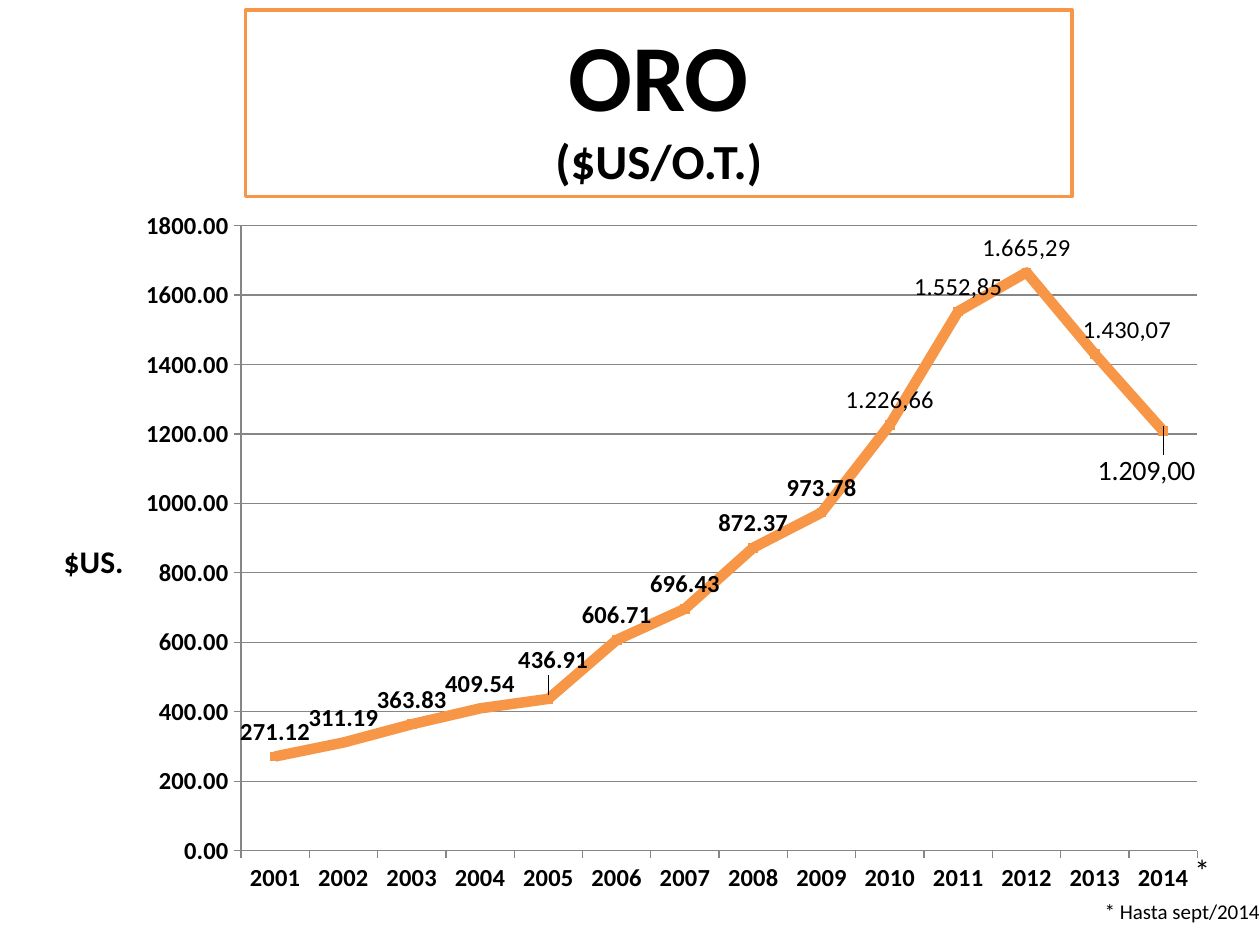
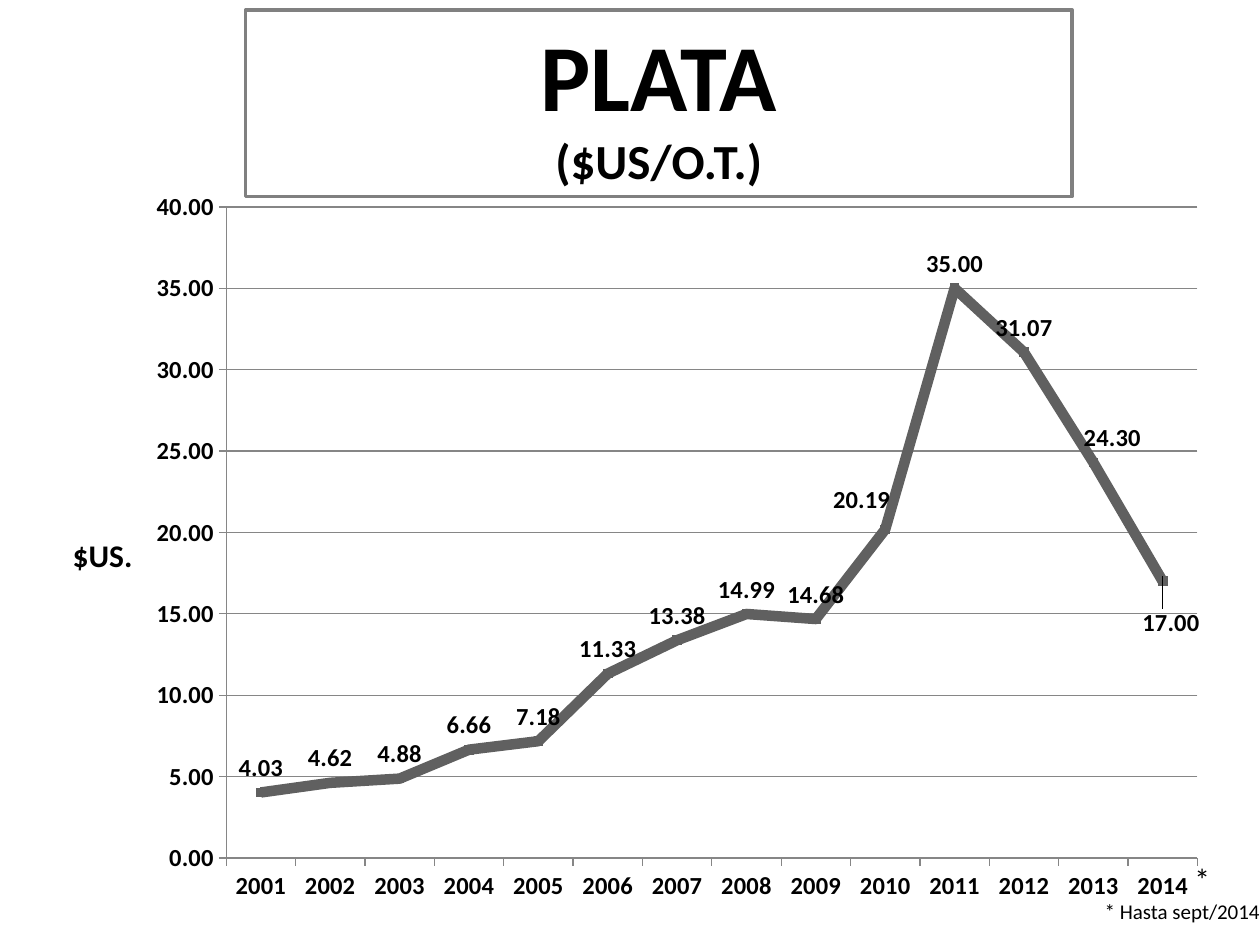
from dataclasses import dataclass

from lxml import etree
from pptx import Presentation
from pptx import util as u
from pptx.chart.data import CategoryChartData
from pptx.dml.color import RGBColor
from pptx.enum import chart as ch
from pptx.enum import text as tx
from pptx.oxml.ns import qn

Cm, Pt = u.Cm, u.Pt

# Shared style
FONT = "Calibri"
BLACK = RGBColor(0x00, 0x00, 0x00)
WHITE = RGBColor(0xFF, 0xFF, 0xFF)
ORANGE = RGBColor(0xF7, 0x96, 0x46)
GREY = RGBColor(0x80, 0x80, 0x80)
DARK_GREY = RGBColor(0x60, 0x60, 0x60)
GRID_GREY = RGBColor(0x86, 0x86, 0x86)

TITLE_ONLY = 5
YEARS = [str(year) for year in range(2001, 2015)]
TITLE_BOX = (4.95, 0.2, 16.66, 3.76)
FOOTNOTE_BOX = (22.02, 17.98, 3.96, 1.55)


@dataclass
class Label:
    """Label of one year: shift as a share of the chart, own wording if any."""
    dx: float = 0
    dy: float = 0
    wording: str = ""
    size: int = 14


@dataclass
class Metal:
    """Price history of one metal; boxes and positions in cm."""
    name: str
    frame_color: RGBColor
    line_color: RGBColor
    prices: list
    labels: dict
    top: int
    step: int
    chart_box: tuple
    plot_box: tuple
    unit_at: tuple
    star_top: float


METALS = [
    Metal("ORO", ORANGE, ORANGE,
          [271.12, 311.19, 363.83, 409.54, 436.91, 606.71, 696.43,
           872.37, 973.78, 1226.66, 1552.85, 1665.29, 1430.07, 1209],
          {"2005": Label(0.004, -0.02),
           "2010": Label(wording="1.226,66"),
           "2011": Label(wording="1.552,85"),
           "2012": Label(wording="1.665,29"),
           "2013": Label(0.027, 0, "1.430,07"),
           "2014": Label(-0.014, 0.094, "1.209,00", 16)},
          1800, 200, (0.58, 3.96, 24, 14.33), (4.86, 4.55, 19.28, 12.6),
          (1.17, 10.77), 17.04),
    Metal("PLATA", GREY, DARK_GREY,
          [4.03, 4.62, 4.88, 6.66, 7.18, 11.33, 13.38,
           14.99, 14.68, 20.19, 35, 31.07, 24.3, 17],
          {"2010": Label(-0.02, -0.007),
           "2013": Label(0.016, 0),
           "2014": Label(0.007, 0.09)},
          40, 5, (0.79, 3.58, 23.83, 14.88), (4.56, 4.17, 19.58, 13.13),
          (1.35, 10.64), 17.22),
]


def cm_box(box):
    return [Cm(length) for length in box]


def style_font(font, size, bold=False):
    font.name, font.size, font.bold = FONT, Pt(size), bold
    font.color.rgb = BLACK


def set_layout(parent, index, **settings):
    """Give a chart part a manual layout, as child number index."""
    for old in parent.findall(qn("c:layout")):
        parent.remove(old)
    layout = etree.Element(qn("c:layout"))
    manual = etree.SubElement(layout, qn("c:manualLayout"))
    for tag, value in settings.items():
        etree.SubElement(manual, qn(f"c:{tag}")).set("val", str(value))
    parent.insert(index, layout)


def share_of(outer, left, top):
    """Position in cm as a share of the outer box."""
    return {"x": round((left - outer[0]) / outer[2], 4),
            "y": round((top - outer[1]) / outer[3], 4)}


def add_title(slide, metal, box):
    title = slide.shapes.title
    title.left, title.top, title.width, title.height = cm_box(box)
    title.fill.solid()
    title.fill.fore_color.rgb = WHITE
    title.line.color.rgb = metal.frame_color
    title.line.width = Pt(2)
    frame = title.text_frame
    frame.text = f"{metal.name}\n($US/O.T.)"
    frame.word_wrap = True
    frame.auto_size = tx.MSO_AUTO_SIZE.SHAPE_TO_FIT_TEXT
    frame.vertical_anchor = tx.MSO_ANCHOR.MIDDLE
    for paragraph, size in zip(frame.paragraphs, (54, 28)):
        paragraph.alignment = tx.PP_ALIGN.CENTER
        style_font(paragraph.font, size, True)
    # The frame stands in front of the chart
    title._element.getparent().append(title._element)


def add_note(slide, wording, size, box):
    note = slide.shapes.add_textbox(*cm_box(box))
    frame = note.text_frame
    frame.word_wrap = True
    frame.text = wording
    style_font(frame.paragraphs[0].font, size)


def style_axes(chart, metal):
    years, prices = chart.category_axis, chart.value_axis
    for axis in (years, prices):
        axis.major_tick_mark = ch.XL_TICK_MARK.OUTSIDE
        axis.minor_tick_mark = ch.XL_TICK_MARK.NONE
        axis.format.line.color.rgb = GRID_GREY
        style_font(axis.tick_labels.font, 14, True)
    prices.minimum_scale, prices.maximum_scale = 0, metal.top
    prices.major_unit = metal.step
    prices.tick_labels.number_format = "0.00"
    prices.tick_labels.number_format_is_linked = False
    prices.has_major_gridlines = True
    prices.major_gridlines.format.line.color.rgb = GRID_GREY

    # Upright unit beside the price axis
    unit = prices.axis_title
    unit.text_frame.text = "$US."
    style_font(unit.text_frame.paragraphs[0].runs[0].font, 18, True)
    body = unit.text_frame._txBody.bodyPr
    body.set("rot", "0")
    body.set("vert", "horz")
    set_layout(unit._element, 1, xMode="edge", yMode="edge",
               **share_of(metal.chart_box, *metal.unit_at))


def style_labels(series, metal):
    labels = series.data_labels
    labels.show_value = True
    labels.number_format, labels.number_format_is_linked = "0.00", False
    labels.position = ch.XL_LABEL_POSITION.ABOVE
    style_font(labels.font, 14, True)
    for year, special in metal.labels.items():
        label = series.points[YEARS.index(year)].data_label
        if special.wording:
            label.text_frame.text = special.wording
            run = label.text_frame.paragraphs[0].runs[0]
            style_font(run.font, special.size)
        else:
            style_font(label.font, special.size, True)
        label.position = ch.XL_LABEL_POSITION.ABOVE
        if special.dx or special.dy:
            set_layout(label._dLbl, 1, x=special.dx, y=special.dy)


def add_price_chart(slide, metal, box):
    history = CategoryChartData(number_format="0.00")
    history.categories = YEARS
    history.add_series("Series 1", metal.prices)
    chart = slide.shapes.add_chart(
        ch.XL_CHART_TYPE.LINE_MARKERS, *cm_box(box), history).chart
    chart.has_legend = chart.has_title = False
    style_font(chart.font, 10)
    plot = chart.plots[0]
    plot.vary_by_categories = False

    left, top, width, height = metal.plot_box
    set_layout(chart._chartSpace.chart.plotArea, 0, layoutTarget="inner",
               xMode="edge", yMode="edge", **share_of(box, left, top),
               w=round(width / box[2], 4), h=round(height / box[3], 4))

    series = plot.series[0]
    series.smooth = False
    series.format.line.color.rgb = metal.line_color
    series.format.line.width = Pt(6)
    marker = series.marker
    marker.style, marker.size = ch.XL_MARKER_STYLE.SQUARE, 5
    marker.format.fill.solid()
    marker.format.fill.fore_color.rgb = metal.line_color
    marker.format.line.color.rgb = metal.line_color
    style_axes(chart, metal)
    style_labels(series, metal)


def add_metal_slide(deck, metal):
    slide = deck.slides.add_slide(deck.slide_layouts[TITLE_ONLY])
    add_price_chart(slide, metal, metal.chart_box)
    add_title(slide, metal, TITLE_BOX)
    add_note(slide, "* Hasta sept/2014", 12, FOOTNOTE_BOX)
    add_note(slide, "*", 18, (23.83, metal.star_top, 0.99, 1.02))


def main():
    deck = Presentation()
    deck.slide_width, deck.slide_height = Cm(25.4), Cm(19.05)
    for metal in METALS:
        add_metal_slide(deck, metal)
    deck.save("out.pptx")


if __name__ == "__main__":
    main()
